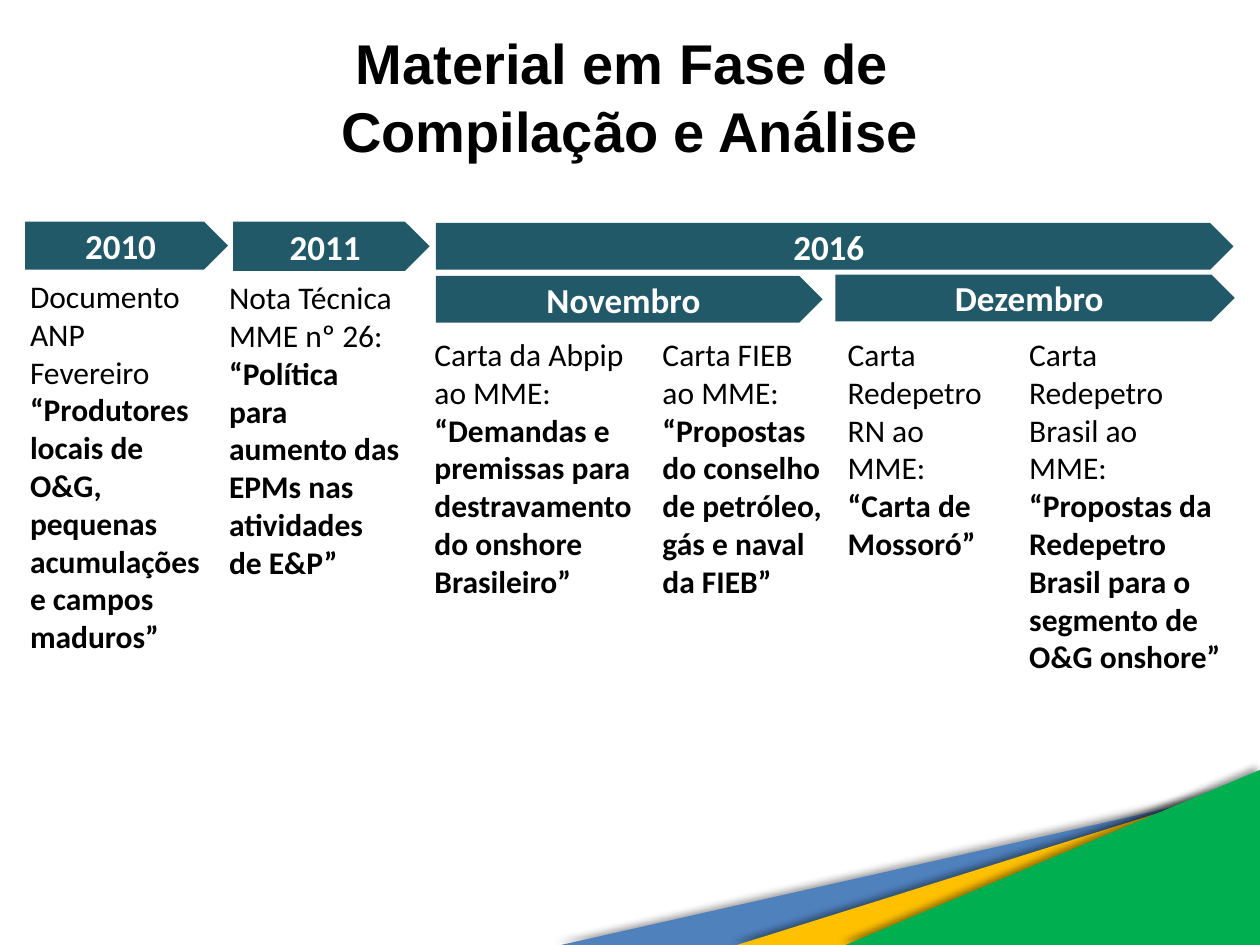
from dataclasses import dataclass

import lxml.etree
import pptx
import pptx.dml.color
import pptx.enum.shapes
import pptx.enum.text
import pptx.oxml
import pptx.oxml.ns
import pptx.util

Pt = pptx.util.Pt
Align = pptx.enum.text.PP_ALIGN
Anchor = pptx.enum.text.MSO_ANCHOR
Preset = pptx.enum.shapes.MSO_SHAPE


@dataclass(frozen=True)
class Theme:
    ink: str = "000000"
    light: str = "FFFFFF"
    period: str = "215968"
    blue: str = "4F81BD"
    yellow: str = "FFC000"
    green: str = "00B050"
    heading_font: str = "Arial"
    body_font: str = "Calibri"
    title_size: int = 32
    period_size: int = 20
    body_size: int = 18


THEME = Theme()
SLIDE_WIDTH, SLIDE_HEIGHT = 720, 540

CORNER = [
    (320.4, 450, THEME.blue),
    (421.2, 446.4, THEME.yellow),
    (483.12, 439.92, THEME.green),
]

PERIODS = [
    ("2016", 249.12, 127.44, 455.76, 26.64),
    ("2011", 133.2, 126.72, 112.32, 28.08),
    ("2010", 14.4, 126.72, 115.92, 27.36),
    ("Novembro", 249.12, 157.68, 221.04, 26.64),
    ("Dezembro", 477.36, 156.96, 228.24, 26.64),
]

DOCUMENTS = [
    (10.08, 154.8, 113.04, 246.96, "Documento ANP Fevereiro",
     "“Produtores locais de O&G, pequenas acumulações e campos maduros”"),
    (123.84, 155.52, 113.04, 203.76, "Nota Técnica MME nº 26:",
     "“Política para aumento das EPMs nas atividades de E&P”"),
    (241.2, 187.92, 131.76, 159.84, "Carta da Abpip ao MME:",
     "“Demandas e premissas para destravamento do onshore Brasileiro”"),
    (371.52, 187.92, 108, 181.44, "Carta FIEB ao MME:",
     "“Propostas do conselho de petróleo, gás e naval da FIEB”"),
    (477.36, 187.92, 98.64, 159.84, "Carta Redepetro RN ao MME:",
     "“Carta de Mossoró”"),
    (581.04, 187.92, 123.84, 225.36, "Carta Redepetro Brasil ao MME:",
     "“Propostas da Redepetro Brasil para o segmento de O&G onshore”"),
]


def rgb(value):
    return pptx.dml.color.RGBColor.from_string(value)


def write(paragraph, text, *, size, font=THEME.body_font, color=THEME.ink,
          bold=False, align=Align.LEFT):
    paragraph.alignment = align
    run = paragraph.add_run()
    run.text = text
    run.font.name = font
    run.font.size = Pt(size)
    run.font.bold = bold
    run.font.color.rgb = rgb(color)


def paint(shape, color):
    shape.shadow.inherit = False
    shape.fill.solid()
    shape.fill.fore_color.rgb = rgb(color)
    shape.line.fill.background()


def cast_shadow(shape):
    effects = shape._element.spPr.find(pptx.oxml.ns.qn("a:effectLst"))
    effects.append(pptx.oxml.parse_xml(
        f'<a:outerShdw {pptx.oxml.ns.nsdecls("a")} blurRad="{Pt(4)}" '
        f'dist="{Pt(3)}" dir="{225 * 60000}" rotWithShape="0">'
        f'<a:srgbClr val="{THEME.ink}"><a:alpha val="40000"/></a:srgbClr>'
        '</a:outerShdw>'))


def add_corner(slide):
    corner = slide.shapes.add_group_shape()
    for left, top, color in CORNER:
        wedge = corner.shapes.add_shape(
            Preset.RIGHT_TRIANGLE, Pt(left), Pt(top),
            Pt(SLIDE_WIDTH - left), Pt(SLIDE_HEIGHT - top))
        wedge.rotation = 180
        wedge._element.spPr.find(pptx.oxml.ns.qn("a:xfrm")).set("flipV", "1")
        paint(wedge, color)
        cast_shadow(wedge)


def add_text_frame(slide, left, top, width, height):
    frame = slide.shapes.add_textbox(
        Pt(left), Pt(top), Pt(width), Pt(height)).text_frame
    frame.word_wrap = True
    return frame


def add_title(slide, lines):
    frame = add_text_frame(slide, 0, 10.08, SLIDE_WIDTH, 66.96)
    frame.margin_top = Pt(6.5)
    for index, line in enumerate(lines):
        paragraph = frame.add_paragraph() if index else frame.paragraphs[0]
        write(paragraph, line, size=THEME.title_size, font=THEME.heading_font,
              bold=True, align=Align.CENTER)


def add_period(slide, label, left, top, width, height):
    period = slide.shapes.add_shape(
        Preset.PENTAGON, Pt(left), Pt(top), Pt(width), Pt(height))
    paint(period, THEME.period)
    period.text_frame.vertical_anchor = Anchor.MIDDLE
    write(period.text_frame.paragraphs[0], label, size=THEME.period_size,
          color=THEME.light, bold=True, align=Align.CENTER)


def add_document(slide, left, top, width, height, source, subject):
    frame = add_text_frame(slide, left, top, width, height)
    frame.auto_size = pptx.enum.text.MSO_AUTO_SIZE.SHAPE_TO_FIT_TEXT
    write(frame.paragraphs[0], source, size=THEME.body_size)
    write(frame.add_paragraph(), subject, size=THEME.body_size, bold=True)


def main():
    deck = pptx.Presentation()
    deck.slide_width, deck.slide_height = Pt(SLIDE_WIDTH), Pt(SLIDE_HEIGHT)
    slide = deck.slides.add_slide(deck.slide_layouts[6])
    add_corner(slide)
    add_title(slide, ["Material em Fase de ", "Compilação e Análise"])
    for period in PERIODS:
        add_period(slide, *period)
    for document in DOCUMENTS:
        add_document(slide, *document)
    deck.save("out.pptx")


if __name__ == "__main__":
    main()
